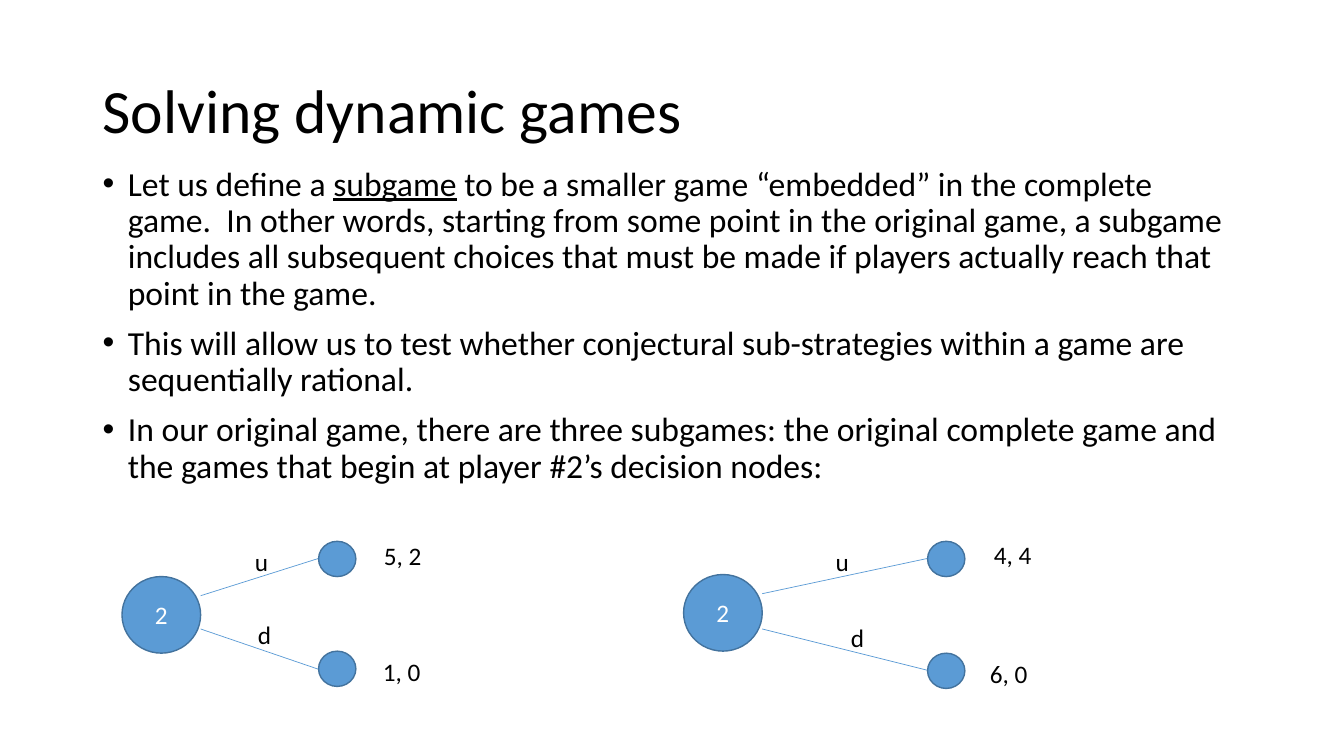
from lxml import etree
from pptx import Presentation
from pptx.dml.color import RGBColor
from pptx.enum.shapes import MSO_CONNECTOR as CONN, MSO_SHAPE as SHAPE
from pptx.enum.text import MSO_ANCHOR as ANCHOR, PP_ALIGN as ALIGN
from pptx.oxml.ns import qn
from pptx.util import Inches, Pt


def rgb(value):
    return RGBColor.from_string(value)


class GameSlide:
    FONT = "Calibri"
    TEXT, WHITE = "000000", "FFFFFF"
    NODE, OUTLINE = "5B9BD5", "43739E"

    def __init__(self, prs):
        self.s = prs.slides.add_slide(prs.slide_layouts[6])
        self.s.background.fill.solid()
        self.s.background.fill.fore_color.rgb = rgb(self.WHITE)

    def style(self, p, size, color=TEXT):
        p.font.name, p.font.size = self.FONT, Pt(size)
        p.font.color.rgb = rgb(color)

    def box(self, x, y, w, h, wrap=True):
        sp = self.s.shapes.add_textbox(Inches(x), Inches(y), Inches(w), Inches(h))
        sp.text_frame.word_wrap = wrap
        return sp.text_frame

    def title(self, text, x, y, w, h):
        tf = self.box(x, y, w, h)
        tf.vertical_anchor = ANCHOR.MIDDLE
        p = tf.paragraphs[0]
        p.text, p.line_spacing = text, 0.9
        self.style(p, 44)

    def bullets(self, items, x, y, w, h):
        """Each item is a list of (text, underlined) runs."""
        tf = self.box(x, y, w, h)
        for i, runs in enumerate(items):
            p = tf.add_paragraph() if i else tf.paragraphs[0]
            p.line_spacing, p.space_before = 0.9, Pt(10)
            self.style(p, 24)
            pPr = p._p.get_or_add_pPr()
            pPr.set("marL", str(Inches(0.25)))
            pPr.set("indent", str(-Inches(0.25)))
            font = etree.Element(qn("a:buFont"), typeface="Arial")
            mark = etree.Element(qn("a:buChar"), char="•")
            pPr.find(qn("a:defRPr")).addprevious(font)
            font.addnext(mark)
            for text, underlined in runs:
                r = p.add_run()
                r.text = text
                self.style(r, 24)
                if underlined:
                    r.font.underline = True

    def label(self, text, x, y, w):
        p = self.box(x, y, w, 0.4, wrap=False).paragraphs[0]
        p.text = text
        self.style(p, 18)

    def node(self, x, y, w, h, text=None):
        sp = self.s.shapes.add_shape(SHAPE.OVAL, Inches(x), Inches(y), Inches(w), Inches(h))
        sp.shadow.inherit = False
        sp.fill.solid()
        sp.fill.fore_color.rgb = rgb(self.NODE)
        sp.line.color.rgb, sp.line.width = rgb(self.OUTLINE), Pt(1)
        if text:
            sp.text_frame.vertical_anchor = ANCHOR.MIDDLE
            p = sp.text_frame.paragraphs[0]
            p.text, p.alignment = text, ALIGN.CENTER
            self.style(p, 18, self.WHITE)

    def branch(self, x1, y1, x2, y2):
        ln = self.s.shapes.add_connector(CONN.STRAIGHT, Inches(x1), Inches(y1), Inches(x2), Inches(y2))
        ln.line.color.rgb, ln.line.width = rgb(self.NODE), Pt(0.5)
        etree.SubElement(ln._element.spPr, qn("a:effectLst"))

    def subgame(self, x, y, end_x, branches):
        """Decision node at (x, y) with one branch per move to end_x."""
        size = 0.78
        self.node(x, y, size, 0.76, "2")
        for start_y, tip_y, end_y, move, payoff in branches:
            self.branch(x + size, start_y, end_x, tip_y)
            self.node(end_x, end_y, 0.37, 0.35)
            self.label(*move, 0.34)
            self.label(*payoff, 0.73)


def main():
    prs = Presentation()
    prs.slide_width, prs.slide_height = Inches(13.33), Inches(7.5)
    slide = GameSlide(prs)

    # Title and explanation
    slide.title("Solving dynamic games", 0.92, 0.4, 11.5, 1.45)
    slide.bullets([
        [("Let us define a ", False), ("subgame", True),
         (" to be a smaller game “embedded” in the complete game.  In other words, "
          "starting from some point in the original game, a subgame includes all "
          "subsequent choices that must be made if players actually reach that "
          "point in the game.", False)],
        [("This will allow us to test whether conjectural sub-strategies within a "
          "game are sequentially rational.", False)],
        [("In our original game, there are three subgames: the original complete "
          "game and the games that begin at player #2’s decision nodes:", False)],
    ], 0.92, 1.61, 11.5, 5.63)

    # Subgames: start y, tip y, end node y, move label, payoff label
    slide.subgame(1.21, 5.72, 3.16, [
        (5.91, 5.54, 5.37, ("u", 2.43, 5.37), ("5, 2", 3.71, 5.31)),
        (6.24, 6.64, 6.46, ("d", 2.46, 6.09), ("1, 0", 3.7, 6.46)),
    ])
    slide.subgame(6.78, 5.7, 9.2, [
        (5.89, 5.54, 5.37, ("u", 8.19, 5.37), ("4, 4", 9.76, 5.3)),
        (6.24, 6.65, 6.48, ("d", 8.34, 6.12), ("6, 0", 9.72, 6.48)),
    ])

    prs.save("out.pptx")


if __name__ == "__main__":
    main()
